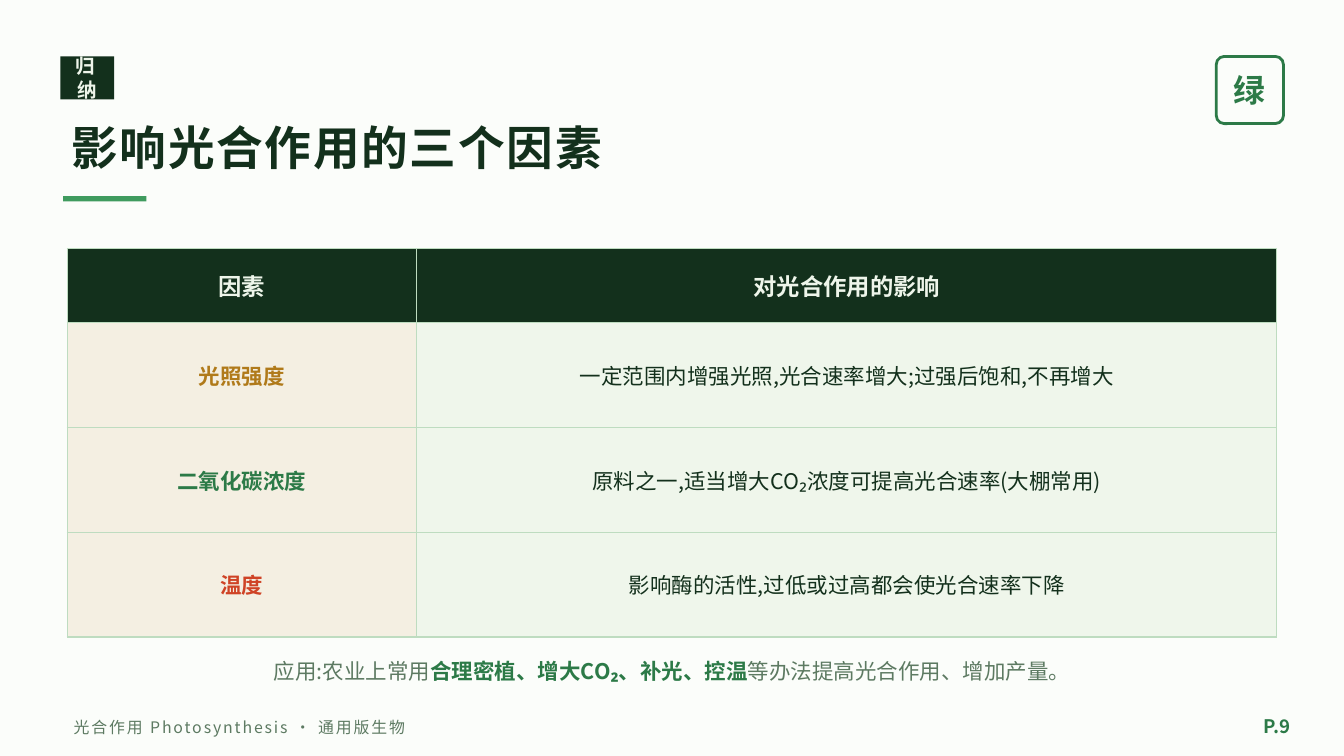
import pptx
import pptx.dml.color
import pptx.enum.shapes
import pptx.enum.text
import pptx.oxml
import pptx.oxml.ns
import pptx.util

Inches = pptx.util.Inches
Pt = pptx.util.Pt
Shape = pptx.enum.shapes.MSO_SHAPE
Align = pptx.enum.text.PP_ALIGN
Anchor = pptx.enum.text.MSO_ANCHOR
qn = pptx.oxml.ns.qn

FONT = "Noto Sans CJK SC"
DARK, GREEN, LEAF = "13301C", "2C7A47", "3F9B5E"
GREY, PALE, EDGE = "5D7A62", "EEF5EA", "BEDCC0"
CREAM, MINT = "F4EFE2", "EFF6EB"

ROWS = [
    ("光照强度", "B07A1A", "一定范围内增强光照,光合速率增大;过强后饱和,不再增大"),
    ("二氧化碳浓度", GREEN, "原料之一,适当增大CO₂浓度可提高光合速率(大棚常用)"),
    ("温度", "CF4326", "影响酶的活性,过低或过高都会使光合速率下降"),
]


def color(code):
    return pptx.dml.color.RGBColor.from_string(code)


def paint(fill, code):
    fill.solid()
    fill.fore_color.rgb = color(code)


def place(shape, box):
    for name, value in zip(("left", "top", "width", "height"), box):
        setattr(shape, name, Inches(value))


def write(frame, runs, align=Align.LEFT):
    """Fill a frame with one paragraph of (text, size, colour, bold, spacing) runs."""
    para = frame.paragraphs[0]
    para.alignment = align
    for text, size, code, bold, space in runs:
        run = para.add_run()
        run.text = text
        form = {"name": FONT, "size": Pt(size), "bold": bold}
        for name, value in form.items():
            setattr(run.font, name, value)
        run.font.color.rgb = color(code)
        props = run.font._element
        props.append(props.makeelement(qn("a:ea"), {"typeface": FONT}))
        if space:
            props.set("spc", str(space * 100))


def set_frame(frame):
    form = {
        "word_wrap": True,
        "auto_size": pptx.enum.text.MSO_AUTO_SIZE.NONE,
        "vertical_anchor": Anchor.MIDDLE,
    }
    for name, value in form.items():
        setattr(frame, name, value)


def add_title(slide, box, run):
    title = slide.shapes.title
    place(title, box)
    set_frame(title.text_frame)
    write(title.text_frame, [run])


def add_text(slide, box, runs, align=Align.LEFT):
    frame = slide.shapes.add_textbox(*map(Inches, box)).text_frame
    set_frame(frame)
    write(frame, runs, align)


def add_bar(slide, box, code):
    bar = slide.shapes.add_shape(Shape.RECTANGLE, *map(Inches, box))
    bar.shadow.inherit = False
    paint(bar.fill, code)
    bar.line.fill.background()


def add_badge(slide, box):
    badge = slide.shapes.add_shape(Shape.ROUNDED_RECTANGLE, *map(Inches, box))
    badge.adjustments[0] = 0.12
    badge.shadow.inherit = False
    badge.fill.background()
    badge.line.color.rgb = color(GREEN)
    badge.line.width = Pt(1.5)


def add_edges(cell):
    props = cell._tc.get_or_add_tcPr()
    for spot, side in enumerate(("lnL", "lnR", "lnT", "lnB")):
        edge = pptx.oxml.parse_xml(
            f'<a:{side} {pptx.oxml.ns.nsdecls("a")} w="{Pt(0.75)}">'
            f'<a:solidFill><a:srgbClr val="{EDGE}"/></a:solidFill></a:{side}>'
        )
        props.insert(spot, edge)


def set_cell(cell, fill, run):
    paint(cell.fill, fill)
    add_edges(cell)
    cell.vertical_anchor = Anchor.MIDDLE
    write(cell.text_frame, [run], Align.CENTER)


def add_grid(slide):
    heads = ("因素", "对光合作用的影响")
    box = map(Inches, (0.5, 1.85, 9, 2.89))
    grid = slide.shapes.add_table(len(ROWS) + 1, len(heads), *box).table
    for col, width in zip(grid.columns, (2.6, 6.4)):
        col.width = Inches(width)
    for num, row in enumerate(grid.rows):
        row.height = Inches(0.78 if num else 0.55)
    for col, text in enumerate(heads):
        set_cell(grid.cell(0, col), DARK, (text, 12.5, PALE, True, 0))
    for num, (factor, code, effect) in enumerate(ROWS, 1):
        set_cell(grid.cell(num, 0), CREAM, (factor, 11.5, code, True, 0))
        set_cell(grid.cell(num, 1), MINT, (effect, 11.5, DARK, False, 0))


def main():
    deck = pptx.Presentation()
    deck.slide_width = Inches(10)
    deck.slide_height = deck.slide_width * 9 // 16
    slide = deck.slides.add_slide(deck.slide_layouts[5])
    paint(slide.background.fill, "FBFDFA")

    add_bar(slide, (0.45, 0.42, 0.4, 0.32), DARK)
    add_text(slide, (0.45, 0.41, 0.4, 0.34),
             [("归纳", 10.5, PALE, True, 2)], Align.CENTER)
    add_title(slide, (0.43, 0.78, 9, 0.62),
              ("影响光合作用的三个因素", 25, DARK, True, 1))
    add_bar(slide, (0.47, 1.46, 0.62, 0.04), LEAF)
    add_badge(slide, (9.05, 0.42, 0.5, 0.5))
    add_text(slide, (9.05, 0.41, 0.5, 0.52),
             [("绿", 17, GREEN, True, 0)], Align.CENTER)

    add_grid(slide)
    add_text(slide, (0.5, 4.74, 9, 0.5), [
        ("应用:农业上常用", 11.5, GREY, False, 0),
        ("合理密植、增大CO₂、补光、控温", 11.5, GREEN, True, 0),
        ("等办法提高光合作用、增加产量。", 11.5, GREY, False, 0),
    ], Align.CENTER)

    add_text(slide, (0.45, 5.26, 6.8, 0.3),
             [("光合作用 Photosynthesis · 通用版生物", 8.5, GREY, False, 1)])
    add_text(slide, (9.1, 5.24, 0.6, 0.32),
             [("P.9", 10, GREEN, True, 0)], Align.RIGHT)
    deck.save("out.pptx")


if __name__ == "__main__":
    main()
